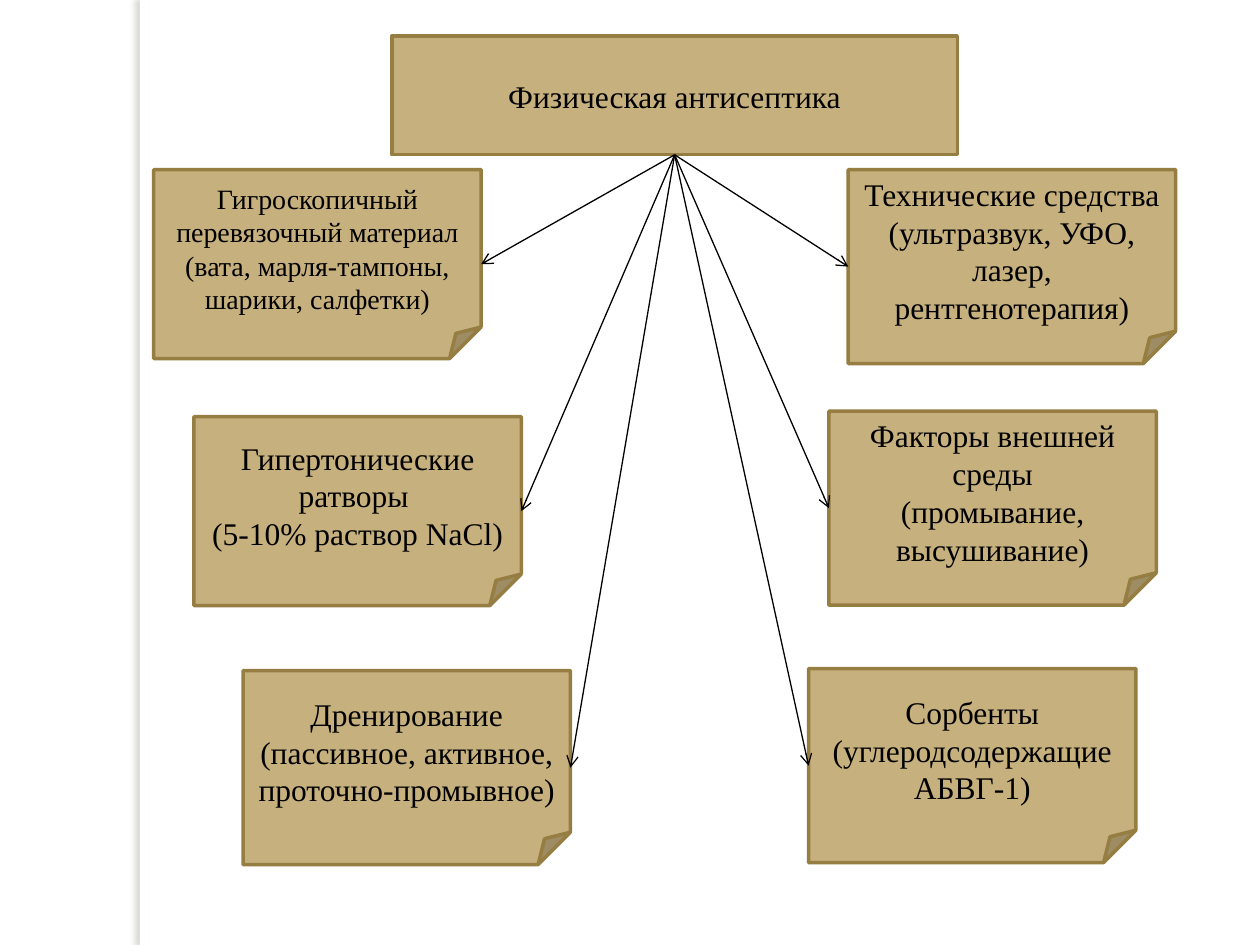
from dataclasses import dataclass

from lxml import etree
from pptx import Presentation
from pptx.dml.color import RGBColor
from pptx.enum.shapes import MSO_CONNECTOR, MSO_SHAPE
from pptx.enum.text import MSO_ANCHOR, PP_ALIGN
from pptx.oxml.ns import qn
from pptx.shapes.autoshape import Shape
from pptx.shapes.shapetree import SlideShapes
from pptx.util import Cm, Pt

RECTANGLE = MSO_SHAPE.RECTANGLE
FOLDED_CORNER = MSO_SHAPE.FOLDED_CORNER
STRAIGHT = MSO_CONNECTOR.STRAIGHT
MIDDLE = MSO_ANCHOR.MIDDLE
CENTER = PP_ALIGN.CENTER

TAN = RGBColor(0xC6, 0xB0, 0x7E)
BRONZE = RGBColor(0x96, 0x7D, 0x42)
BLACK = RGBColor(0, 0, 0)
WHITE = RGBColor(0xFF, 0xFF, 0xFF)
SHADOW = RGBColor(0x73, 0x6F, 0x63)

FONT = "Times New Roman"
LEFT_SITE, BOTTOM_SITE, RIGHT_SITE = 1, 2, 3
NOTE_WIDTH = 6.6


@dataclass(frozen=True)
class Card:
    left: float
    top: float
    height: float
    lines: tuple[str, ...]
    width: float = NOTE_WIDTH
    font_size: int = 18


HEADING = Card(7.9, 0.73, 2.39, ("Физическая антисептика",), width=11.4)
LEFT_METHODS = (
    Card(3.1, 3.42, 3.81, ("Гигроскопичный перевязочный материал",
                           "(вата, марля-тампоны, шарики, салфетки)"), font_size=16),
    Card(3.91, 8.4, 3.81, ("Гипертонические ратворы ", "(5-10% раствор NaCl)")),
    Card(4.9, 13.52, 3.91, ("Дренирование", "(пассивное, активное, проточно-промывное)")),
)
RIGHT_METHODS = (
    Card(17.1, 3.42, 3.91, ("Технические средства ",
                            "(ультразвук, УФО, лазер, рентгенотерапия)")),
    Card(16.71, 8.29, 3.91, ("Факторы внешней среды", "(промывание, высушивание)")),
    Card(16.3, 13.48, 3.91, ("Сорбенты", "(углеродсодержащие АБВГ-1)")),
)


def draw_side_strip(shapes: SlideShapes) -> None:
    strip = shapes.add_shape(RECTANGLE, Cm(2.82), 0, Cm(0.2), Cm(19.05))
    strip.fill.solid()
    strip.fill.fore_color.rgb = WHITE
    strip.line.fill.background()
    strip.shadow.inherit = False
    effects = strip.element.spPr.find(qn("a:effectLst"))
    outer = etree.SubElement(effects, qn("a:outerShdw"), blurRad=str(Pt(3)),
                             dist=str(Pt(3)), dir="10800000", rotWithShape="0")
    color = etree.SubElement(outer, qn("a:srgbClr"), val=str(SHADOW))
    etree.SubElement(color, qn("a:alpha"), val="25000")


def draw_card(shapes: SlideShapes, card: Card, outline: MSO_SHAPE) -> Shape:
    box = shapes.add_shape(outline, Cm(card.left), Cm(card.top),
                           Cm(card.width), Cm(card.height))
    box.shadow.inherit = False
    box.fill.solid()
    box.fill.fore_color.rgb = TAN
    box.line.color.rgb = BRONZE
    box.line.width = Pt(2)
    frame = box.text_frame
    frame.word_wrap = True
    frame.vertical_anchor = MIDDLE
    frame.text = "\n".join(card.lines)
    for paragraph in frame.paragraphs:
        paragraph.alignment = CENTER
        paragraph.font.name = FONT
        paragraph.font.size = Pt(card.font_size)
        paragraph.font.color.rgb = BLACK
    return box


def draw_arrow(shapes: SlideShapes, heading: Shape, method: Shape, site: int) -> None:
    arrow = shapes.add_connector(STRAIGHT, 0, 0, 0, 0)
    arrow.begin_connect(heading, BOTTOM_SITE)
    arrow.end_connect(method, site)
    arrow.line.color.rgb = BLACK
    arrow.line.width = Pt(0.75)
    properties = arrow._element.spPr
    etree.SubElement(properties.find(qn("a:ln")), qn("a:tailEnd"), type="arrow")
    etree.SubElement(properties, qn("a:effectLst"))


def main() -> None:
    """Build the slide on the methods of physical antisepsis."""
    deck = Presentation()
    deck.slide_width, deck.slide_height = Cm(25.4), Cm(19.05)
    shapes = deck.slides.add_slide(deck.slide_layouts[6]).shapes

    draw_side_strip(shapes)
    heading = draw_card(shapes, HEADING, RECTANGLE)
    sides = ((LEFT_METHODS, RIGHT_SITE), (RIGHT_METHODS, LEFT_SITE))
    methods = [(draw_card(shapes, card, FOLDED_CORNER), site)
               for cards, site in sides for card in cards]
    for method, site in methods:
        draw_arrow(shapes, heading, method, site)

    deck.save("out.pptx")


if __name__ == "__main__":
    main()
